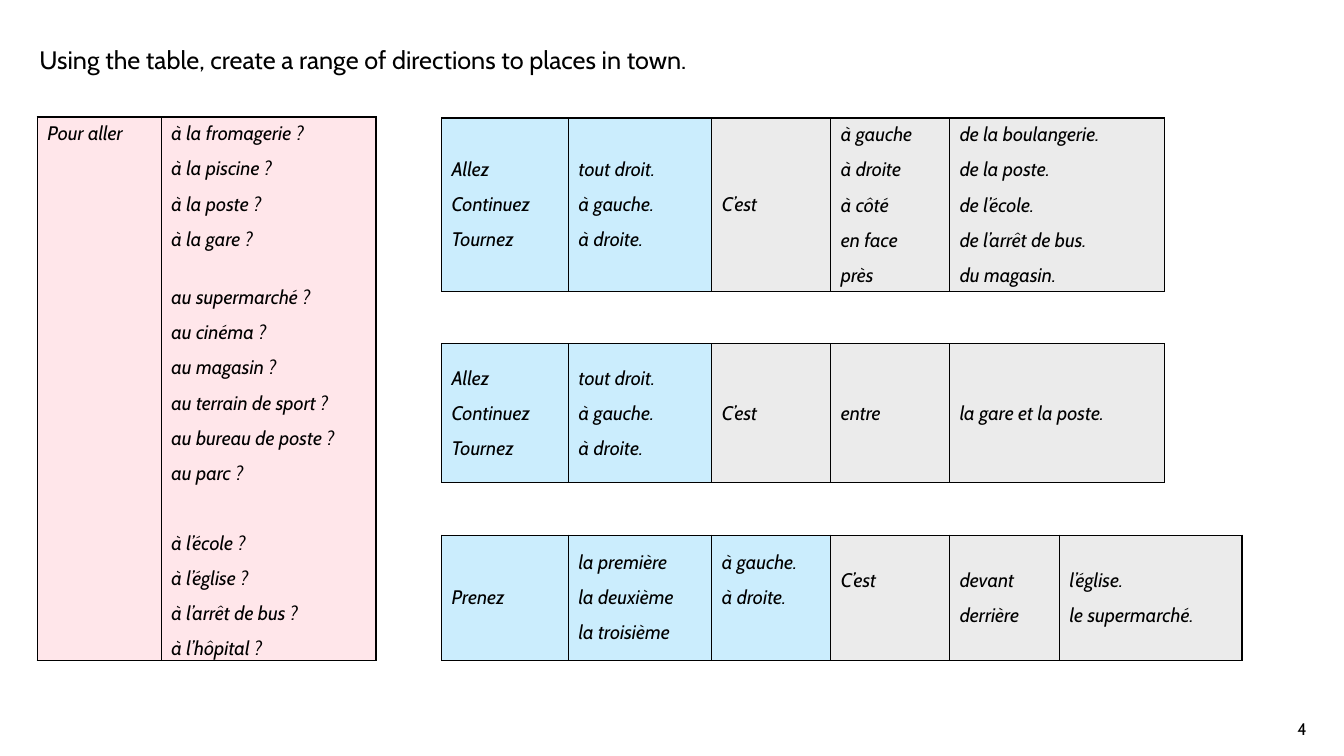
from dataclasses import dataclass

from lxml import etree
from pptx import Presentation
from pptx import util as u
from pptx.dml import color
from pptx.enum import text
from pptx.oxml import ns


@dataclass(frozen=True)
class Theme:
    """Fonts, type sizes in points and colours of the slide."""
    font: str = "Cabin"
    heading: int = 18
    body: int = 14
    footer: int = 12
    ink: str = "000000"
    question: str = "FFE6EA"
    direction: str = "CBEDFD"
    location: str = "EBEBEB"


def write(frame, lines, *, theme, size, italic=False, align=text.PP_ALIGN.LEFT, after=0, gaps=None):
    """Fill a text frame line by line, with wider gaps after chosen lines."""
    gaps = gaps or {}
    frame.word_wrap = True
    for index, line in enumerate(lines.split("\n")):
        paragraph = frame.paragraphs[0] if index == 0 else frame.add_paragraph()
        paragraph.alignment = align
        paragraph.space_after = u.Pt(gaps.get(index, after))
        run = paragraph.add_run()
        run.text = line
        run.font.name = theme.font
        run.font.size = u.Pt(size)
        run.font.italic = italic
        run.font.color.rgb = color.RGBColor.from_string(theme.ink)


class Worksheet:
    """Draws labels and phrase tables on one slide."""

    def __init__(self, slide, theme):
        self.slide = slide
        self.theme = theme

    def label(self, words, left, top, width, height, **style):
        """Add a text box without insets."""
        frame = self.slide.shapes.add_textbox(*map(u.Inches, (left, top, width, height))).text_frame
        frame.margin_left = frame.margin_right = frame.margin_top = frame.margin_bottom = 0
        write(frame, words, theme=self.theme, **style)

    def border(self, cell):
        """Draw a thin line on all four sides of a cell."""
        properties = cell._tc.get_or_add_tcPr()
        for side in ("a:lnL", "a:lnR", "a:lnT", "a:lnB"):
            line = etree.SubElement(properties, ns.qn(side), w=str(u.Pt(1)))
            fill = etree.SubElement(line, ns.qn("a:solidFill"))
            etree.SubElement(fill, ns.qn("a:srgbClr"), val=self.theme.ink)

    def phrases(self, left, top, height, widths, fills, columns,
                anchor=text.MSO_ANCHOR.MIDDLE, gaps=None, raised=()):
        """Add a one-row table; raised columns sit one line higher."""
        frame = self.slide.shapes.add_table(
            1, len(columns), *map(u.Inches, (left, top, sum(widths), height)))
        table = frame.table
        table.first_row = table.horz_banding = False
        for index, (width, fill, lines) in enumerate(zip(widths, fills, columns)):
            table.columns[index].width = u.Inches(width)
            cell = table.cell(0, index)
            self.border(cell)
            cell.fill.solid()
            cell.fill.fore_color.rgb = color.RGBColor.from_string(fill)
            cell.vertical_anchor = anchor
            if index in raised:
                cell.margin_bottom = u.Inches(0.4)
            write(cell.text_frame, lines, theme=self.theme, size=self.theme.body,
                  italic=True, after=8, gaps=gaps)


def main():
    """Build the directions slide."""
    deck = Presentation()
    deck.slide_width, deck.slide_height = u.Inches(13.33), u.Inches(7.5)
    theme = Theme()
    sheet = Worksheet(deck.slides.add_slide(deck.slide_layouts[6]), theme)

    sheet.label("Using the table, create a range of directions to places in town.",
                0.39, 0.44, 7.56, 0.46, size=theme.heading)

    destinations = """à la fromagerie ?
à la piscine ?
à la poste ?
à la gare ?
au supermarché ?
au cinéma ?
au magasin ?
au terrain de sport ?
au bureau de poste ?
au parc ?
à l’école ?
à l’église ?
à l’arrêt de bus ?
à l’hôpital ?"""
    sheet.phrases(0.37, 1.16, 5.39, [1.23, 2.13], [theme.question] * 2,
                  ["Pour aller", destinations],
                  anchor=text.MSO_ANCHOR.TOP, gaps={3: 25, 9: 33})

    shared_widths = [1.26, 1.42, 1.18, 1.18]
    verbs = "Allez\nContinuez\nTournez"
    turns = "tout droit.\nà gauche.\nà droite."
    answers = [
        (1.17, 1.72, "à gauche\nà droite\nà côté\nen face\nprès",
         "de la boulangerie.\nde la poste.\nde l’école.\nde l’arrêt de bus.\ndu magasin."),
        (3.41, 1.38, "entre", "la gare et la poste."),
    ]
    for top, height, position, landmark in answers:
        sheet.phrases(4.38, top, height, shared_widths + [2.13],
                      [theme.direction] * 2 + [theme.location] * 3,
                      [verbs, turns, "C’est", position, landmark])

    sheet.phrases(4.38, 5.31, 1.24, shared_widths + [1.09, 1.81],
                  [theme.direction] * 3 + [theme.location] * 3,
                  ["Prenez", "la première\nla deuxième\nla troisième", "à gauche.\nà droite.",
                   "C’est", "devant\nderrière", "l’église.\nle supermarché."],
                  raised=(2, 3))

    sheet.label("4", 12.17, 7.13, 0.79, 0.2, size=theme.footer, align=text.PP_ALIGN.RIGHT)
    deck.save("out.pptx")


if __name__ == "__main__":
    main()
